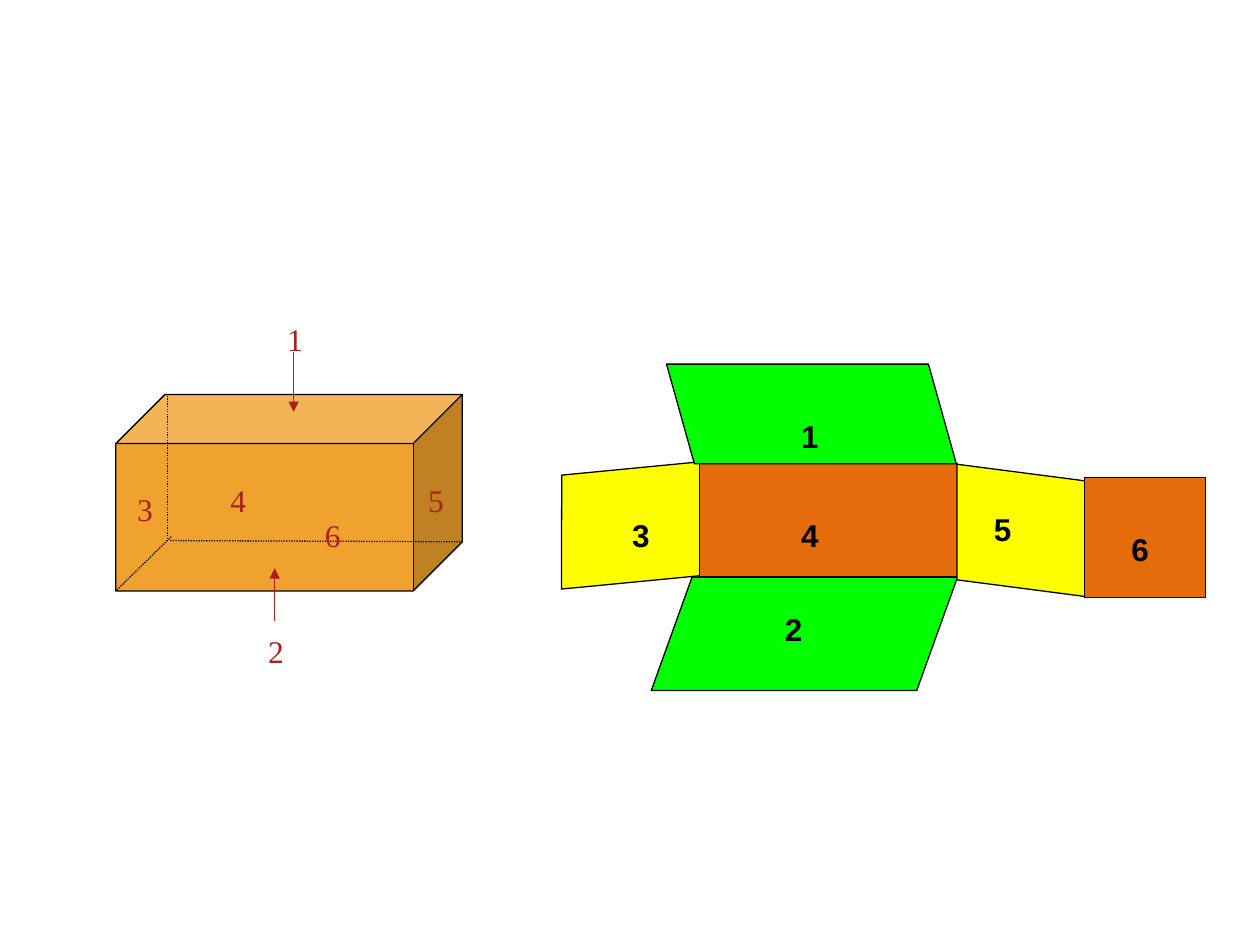
from lxml import etree
from pptx import Presentation
from pptx.dml.color import RGBColor
from pptx.enum.dml import MSO_LINE
from pptx.enum.shapes import MSO_CONNECTOR, MSO_SHAPE
from pptx.enum.text import MSO_AUTO_SIZE
from pptx.oxml.ns import qn
from pptx.util import Pt

CUBE, RECT, SLANT = MSO_SHAPE.CUBE, MSO_SHAPE.RECTANGLE, MSO_SHAPE.PARALLELOGRAM
STRAIGHT, DOTTED = MSO_CONNECTOR.STRAIGHT, MSO_LINE.ROUND_DOT
GROW = MSO_AUTO_SIZE.SHAPE_TO_FIT_TEXT

THEME = {
    "box": "F0A22E", "ends": "FFFF00", "sides": "E46C0A", "lids": "00FF00",
    "outline": "000000", "accent": "AD1F1F",
    "line": 0.75, "size": 18, "box_font": "Times New Roman", "net_font": "Arial",
}

BOX = (CUBE, (66.2, 225.4, 198, 112.3), "box", 0.25, 0, False)
HIDDEN_EDGES = [
    (95.8, 226.1, 95.8, 307.4),
    (97.2, 308.9, 263.5, 309.6),
    (97.9, 306.7, 66.2, 337.7),
]
ARROWS = [(157, 355, 157, 324.7), (167.8, 200.9, 167.8, 235.4)]
BOX_LABELS = {
    "3": (71.3, 276.5), "6": (178.6, 291.6), "4": (124.6, 271.4),
    "5": (237.6, 271.4), "1": (157, 179.3), "2": (146.2, 357.8),
}

NET = [
    (SLANT, (317.5, 267.8, 87.1, 64.8), "ends", 0.1, 354.5, False),
    (RECT, (399.6, 265, 147.6, 64.8), "sides", None, 0, False),
    (SLANT, (380.9, 208.1, 165.6, 56.9), "lids", 0.28, 0, True),
    (SLANT, (372.2, 329.8, 175, 64.8), "lids", 0.36, 0, False),
    (SLANT, (545.8, 266.4, 75.6, 73.4), "ends", 0.13, 90, False),
    (RECT, (619.9, 272.9, 69.1, 68.4), "sides", None, 0, False),
]
NET_LABELS = {
    "3": (354.2, 291.6), "6": (639.4, 299.5), "4": (450.7, 291.6),
    "5": (560.9, 288), "1": (450.7, 234.7), "2": (441.4, 344.9),
}


def color(name):
    return RGBColor.from_string(THEME[name])


def add_face(group, kind, at, fill, adj, rotation, flipped):
    s = group.shapes.add_shape(kind, *map(Pt, at))
    s.shadow.inherit = False
    s.fill.solid()
    s.fill.fore_color.rgb = color(fill)
    s.line.color.rgb = color("outline")
    s.line.width = Pt(THEME["line"])
    s.rotation = rotation
    if adj is not None:
        s.adjustments[0] = adj
    if flipped:
        s._element.spPr.find(qn("a:xfrm")).set("flipV", "1")


def add_line(group, ends, name, arrow=False):
    c = group.shapes.add_connector(STRAIGHT, *map(Pt, ends))
    c.line.color.rgb = color(name)
    c.line.width = Pt(THEME["line"])
    if arrow:
        etree.SubElement(c.line._get_or_add_ln(), qn("a:tailEnd"), type="triangle")
    else:
        c.line.dash_style = DOTTED
    etree.SubElement(c._element.spPr, qn("a:effectLst"))


def add_labels(group, labels, width, font, name, bold):
    for text, (x, y) in labels.items():
        tf = group.shapes.add_textbox(Pt(x), Pt(y), Pt(width), Pt(28.8)).text_frame
        tf.word_wrap = True
        tf.auto_size = GROW
        p = tf.paragraphs[0]
        p.text = text
        p.font.name = THEME[font]
        p.font.size = Pt(THEME["size"])
        p.font.bold = bold
        p.font.color.rgb = color(name)


def main():
    """Build a slide showing a numbered box beside its unfolded net."""
    prs = Presentation()
    prs.slide_width, prs.slide_height = Pt(720), Pt(540)
    slide = prs.slides.add_slide(prs.slide_layouts[6])

    box = slide.shapes.add_group_shape()
    add_face(box, *BOX)
    for edge in HIDDEN_EDGES:
        add_line(box, edge, "outline")
    add_labels(box, BOX_LABELS, 26.6, "box_font", "accent", False)
    for arrow in ARROWS:
        add_line(box, arrow, "accent", arrow=True)

    net = slide.shapes.add_group_shape()
    for face in NET:
        add_face(net, *face)
    add_labels(net, NET_LABELS, 23, "net_font", "outline", True)

    prs.save("out.pptx")


if __name__ == "__main__":
    main()
